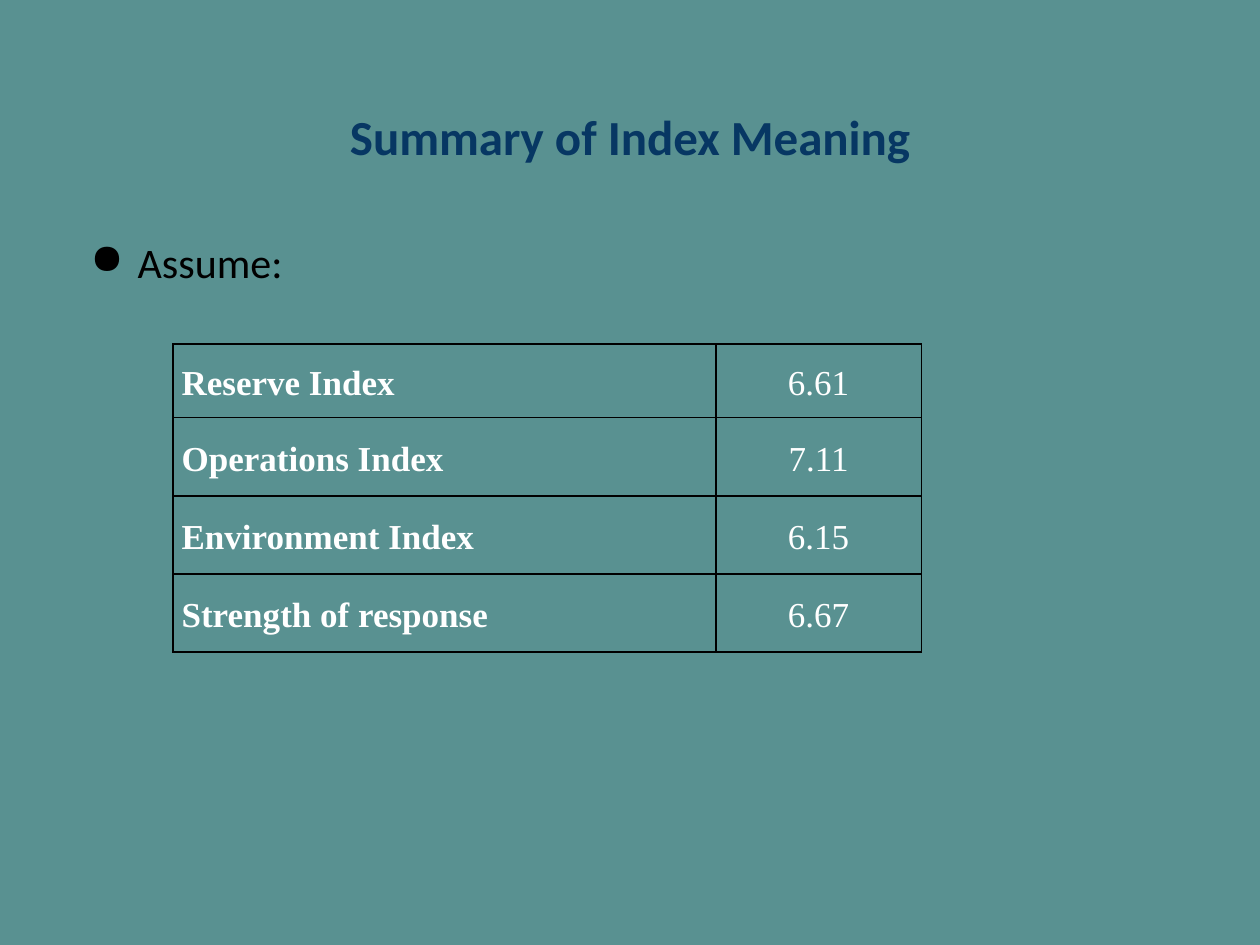
from lxml import etree
from pptx import Presentation
from pptx import util as u
from pptx.dml import color
from pptx.enum import text
from pptx.oxml import ns

COLORS = {"background": "599191", "title": "073763", "body": "000000",
          "border": "000000", "cell": "FFFFFF"}
INDEXES = [("Reserve Index", "6.61"), ("Operations Index", "7.11"),
           ("Environment Index", "6.15"), ("Strength of response", "6.67")]


def add_node(parent, tag, **attributes):
    return etree.SubElement(parent, ns.qn(tag), attributes)


class SlideBuilder:
    title_format = {"name": "Calibri", "size": u.Pt(28), "bold": True}
    body_format = {"name": "Calibri", "size": u.Pt(24), "bold": False}
    label_format = {"name": "Times New Roman", "size": u.Pt(20), "bold": True}
    value_format = {**label_format, "bold": False}

    def __init__(self, deck):
        self.page = deck.slides.add_slide(deck.slide_layouts[5])
        fill = self.page.background.fill
        fill.solid()
        fill.fore_color.rgb = color.RGBColor.from_string(COLORS["background"])

    def set_text(self, frame, words, values, ink, align, spacing=1.0):
        para = frame.paragraphs[0]
        para.alignment = align
        para.line_spacing = spacing
        span = para.add_run()
        span.text = words
        for key, value in values.items():
            setattr(span.font, key, value)
        span.font.color.rgb = color.RGBColor.from_string(COLORS[ink])
        return para

    def title(self, words, left, top, width, height):
        box = self.page.shapes.title
        place = {"left": left, "top": top, "width": width, "height": height}
        for key, value in place.items():
            setattr(box, key, u.Pt(value))
        box.text_frame.vertical_anchor = text.MSO_ANCHOR.MIDDLE
        self.set_text(box.text_frame, words, self.title_format, "title",
                      text.PP_ALIGN.CENTER)

    def bullet(self, words, left, top, width, height, indent):
        box = self.page.shapes.add_textbox(*map(u.Pt, (left, top, width, height)))
        box.text_frame.word_wrap = True
        para = self.set_text(box.text_frame, words, self.body_format, "body",
                             text.PP_ALIGN.LEFT, 0.9)
        properties = para._p.get_or_add_pPr()
        properties.set("marL", str(u.Pt(indent)))
        properties.set("indent", str(-u.Pt(indent)))
        add_node(add_node(properties, "a:buClr"), "a:srgbClr", val=COLORS["body"])
        add_node(properties, "a:buChar", char="●")

    def border(self, cell):
        properties = cell._tc.get_or_add_tcPr()
        for side in "LRTB":
            line = add_node(properties, f"a:ln{side}", w=str(u.Pt(1)))
            add_node(add_node(line, "a:solidFill"), "a:srgbClr", val=COLORS["border"])

    def table(self, rows, left, top, widths, heights):
        frame = self.page.shapes.add_table(
            len(rows), len(widths),
            *map(u.Pt, (left, top, sum(widths), sum(heights))))
        table = frame.table
        table.first_row = table.horz_banding = False
        for column, width in zip(table.columns, widths):
            column.width = u.Pt(width)
        styles = ((self.label_format, text.PP_ALIGN.LEFT),
                  (self.value_format, text.PP_ALIGN.CENTER))
        for row, height, words in zip(table.rows, heights, rows):
            row.height = u.Pt(height)
            for cell, word, (values, align) in zip(row.cells, words, styles):
                self.border(cell)
                cell.fill.background()
                cell.vertical_anchor = text.MSO_ANCHOR.MIDDLE
                cell.margin_left = cell.margin_right = u.Pt(5)
                cell.margin_top = cell.margin_bottom = 0
                self.set_text(cell.text_frame, word, values, "cell", align, 1.15)


def main():
    deck = Presentation()
    deck.slide_width, deck.slide_height = u.Pt(720), u.Pt(540)
    slide = SlideBuilder(deck)
    slide.title("Summary of Index Meaning", 36, 32.4, 648, 90)
    slide.bullet("Assume:", 44.6, 134.6, 151, 54, indent=27)
    slide.table(INDEXES, 98.8, 196.6, [310.3, 117.4], [42.1] + [44.6] * 3)
    deck.save("out.pptx")


if __name__ == "__main__":
    main()
